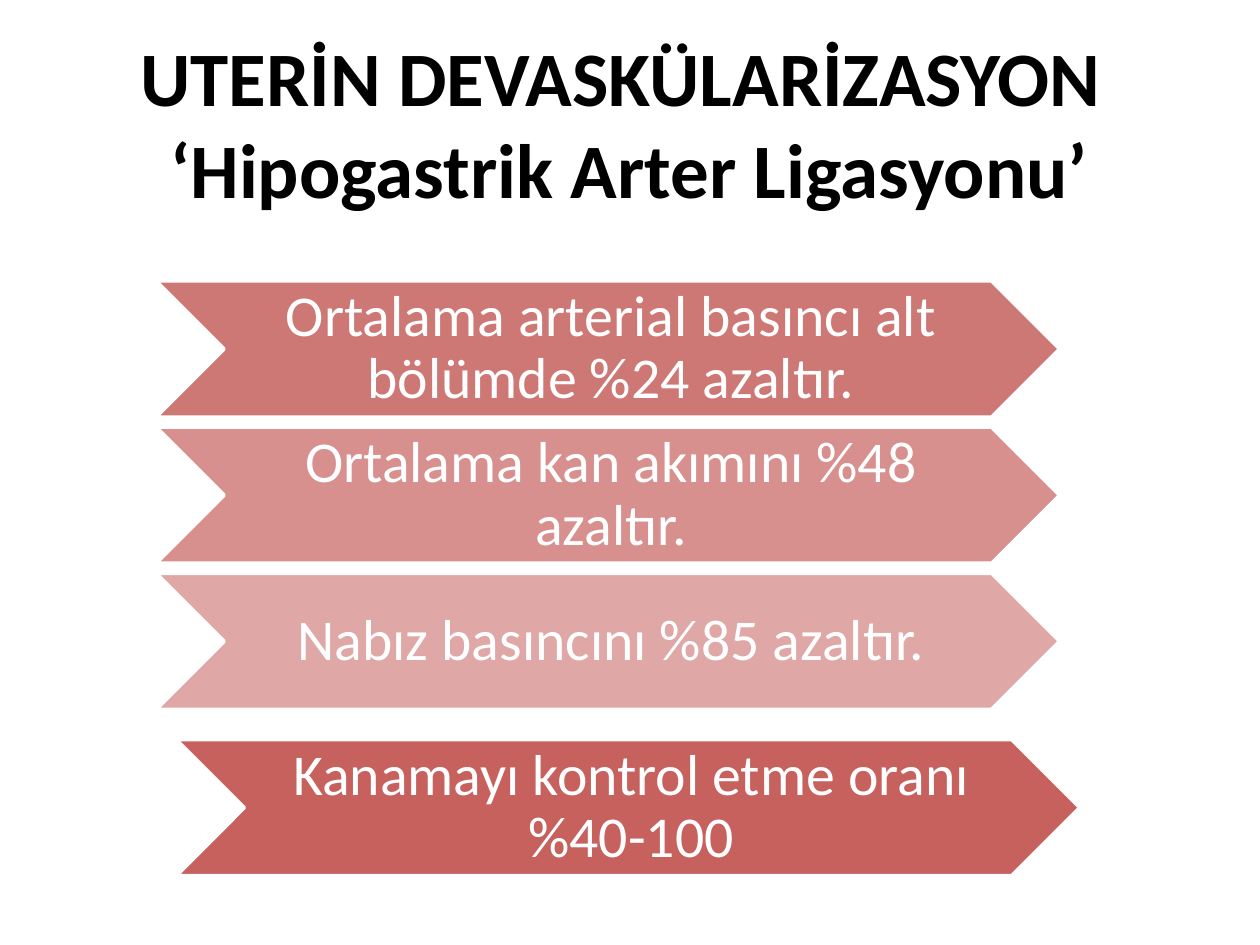
from lxml.etree import SubElement
from pptx import Presentation
from pptx.dml.color import RGBColor
from pptx.enum.shapes import MSO_SHAPE
from pptx.enum.text import MSO_ANCHOR, PP_ALIGN
from pptx.oxml.ns import qn
from pptx.util import Inches, Pt

COLORS = {"title": "000000", "chevron": "C0504D", "light": "FFFFFF"}
FONT = "Calibri"
TITLE = "UTERİN DEVASKÜLARİZASYON \v‘Hipogastrik Arter Ligasyonu’"

# Text and opacity in percent
EFFECTS = [
    ("Ortalama arterial basıncı alt bölümde %24 azaltır.", 77),
    ("Ortalama kan akımını %48 azaltır.", 63),
    ("Nabız basıncını %85 azaltır.", 50),
]
CONCLUSION = ("Kanamayı kontrol etme oranı %40-100", 90)

EFFECT_LEFT, EFFECT_TOP, EFFECT_PITCH = 1.24, 2.23, 1.16
CONCLUSION_LEFT, CONCLUSION_TOP = 1.4, 5.87
CHEVRON_WIDTH, CHEVRON_HEIGHT = 7.17, 1.08


def format_paragraph(paragraph, size, color, bold=False):
    paragraph.alignment = PP_ALIGN.CENTER
    font = paragraph.font
    font.name, font.size, font.bold = FONT, Pt(size), bold
    font.color.rgb = RGBColor.from_string(COLORS[color])


def add_title(slide):
    title = slide.shapes.title
    title.left, title.top = Inches(0.5), Inches(0.34)
    title.width, title.height = Inches(9), Inches(1.25)
    frame = title.text_frame
    frame.text = TITLE
    frame.vertical_anchor = MSO_ANCHOR.MIDDLE
    format_paragraph(frame.paragraphs[0], 44, "title", bold=True)


def add_chevron(slide, left, top, text, opacity):
    chevron = slide.shapes.add_shape(
        MSO_SHAPE.CHEVRON, Inches(left), Inches(top),
        Inches(CHEVRON_WIDTH), Inches(CHEVRON_HEIGHT))
    chevron.shadow.inherit = False
    chevron.fill.solid()
    chevron.fill.fore_color.rgb = RGBColor.from_string(COLORS["chevron"])
    fill_color = chevron.fill._xPr.find(qn("a:solidFill"))[0]
    SubElement(fill_color, qn("a:alpha"), val=str(opacity * 1000))
    chevron.line.color.rgb = RGBColor.from_string(COLORS["light"])
    chevron.line.width = Pt(2)

    frame = chevron.text_frame
    frame.word_wrap = True
    frame.vertical_anchor = MSO_ANCHOR.MIDDLE
    frame.margin_left, frame.margin_right = Inches(0.05), 0
    frame.margin_top = frame.margin_bottom = Inches(0.02)
    frame.text = text
    paragraph = frame.paragraphs[0]
    paragraph.line_spacing = 0.9
    format_paragraph(paragraph, 33, "light")


def main():
    prs = Presentation()
    prs.slide_width, prs.slide_height = Inches(10), Inches(7.5)
    slide = prs.slides.add_slide(prs.slide_layouts[5])
    add_title(slide)
    for row, (text, opacity) in enumerate(EFFECTS):
        add_chevron(slide, EFFECT_LEFT, EFFECT_TOP + row * EFFECT_PITCH, text, opacity)
    add_chevron(slide, CONCLUSION_LEFT, CONCLUSION_TOP, *CONCLUSION)
    prs.save("out.pptx")


if __name__ == "__main__":
    main()
